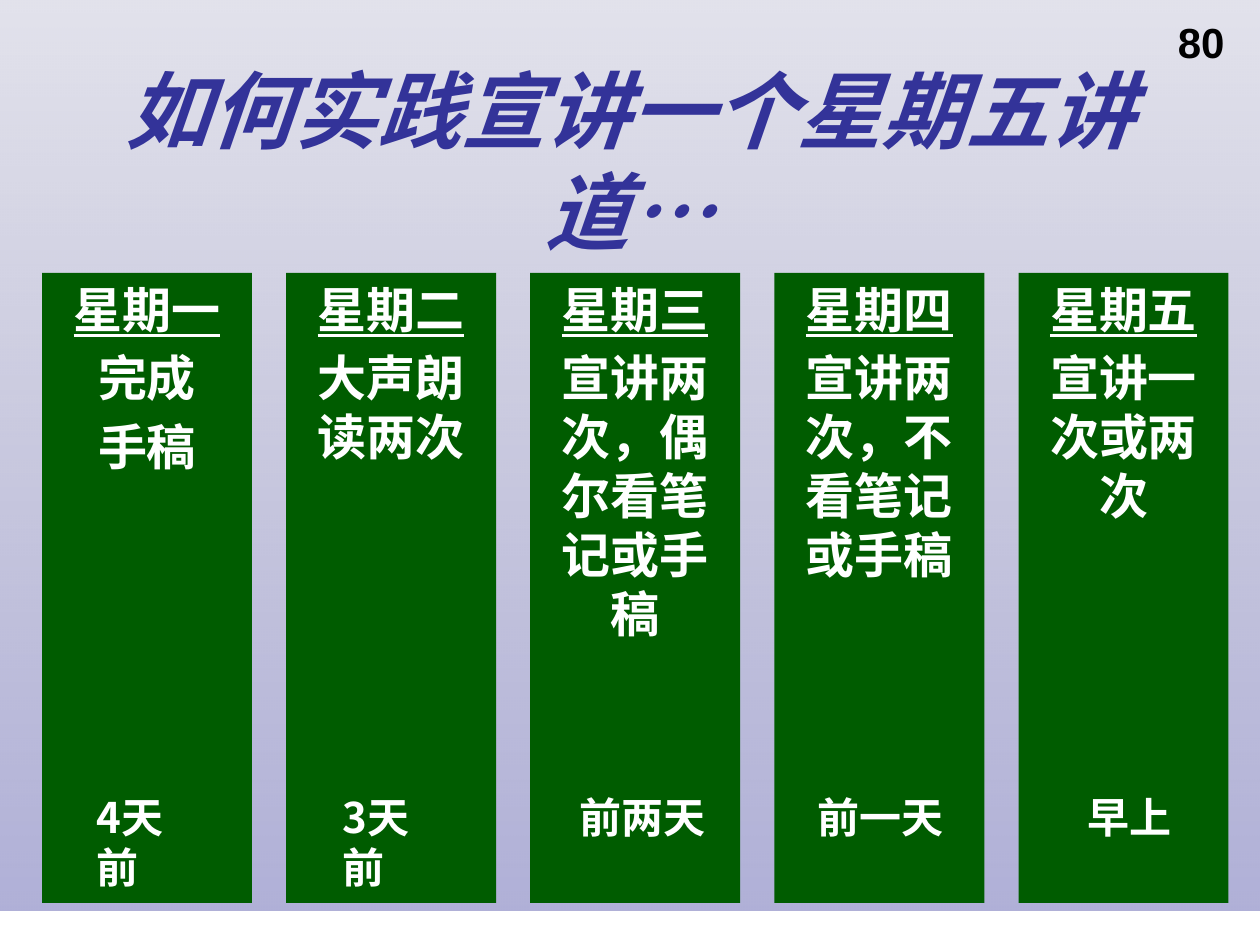
"""Build the Friday sermon practice slide."""
from dataclasses import dataclass

from lxml.etree import SubElement
from pptx import Presentation
from pptx.dml.color import RGBColor
from pptx.enum.shapes import MSO_SHAPE as Preset
from pptx.enum.text import MSO_ANCHOR as Anchor, MSO_AUTO_SIZE as AutoSize, PP_ALIGN as Align
from pptx.oxml.ns import qn
from pptx.util import Pt

CJK = "Noto Sans CJK TC"
WHITE, GREEN, BLUE, NAVY = "FFFFFF", "005C00", "333399", "24246D"
CARD_LEFT, CARD_TOP, CARD_STEP = 24, 156, 139.5
CARD_WIDTH, CARD_HEIGHT = 120, 360
LABEL_TOP, LABEL_HEIGHT = 448.5, 65.5


@dataclass
class Day:
    name: str
    tasks: list[str]
    label: str
    label_left: float
    label_width: float


DAYS = [
    Day("星期一", ["完成", "手稿"], "4天前", 48.3, 75),
    Day("星期二", ["大声朗读两次"], "3天前", 188.5, 75),
    Day("星期三", ["宣讲两次，偶尔看笔记或手稿"], "前两天", 324, 87.2),
    Day("星期四", ["宣讲两次，不看笔记或手稿"], "前一天", 460.3, 87.2),
    Day("星期五", ["宣讲一次或两次"], "早上", 614.2, 63.5),
]


def color(value: str) -> RGBColor:
    """Turn a hex string into a colour."""
    return RGBColor.from_string(value)


def apply(target, values: dict) -> None:
    """Set every attribute in the dict on the target."""
    for name, value in values.items():
        setattr(target, name, value)


def write(para, text: str, size: float, ink: str, font: str = CJK, **style) -> None:
    """Add one bold span to a paragraph."""
    span = para.add_run()
    span.text = text
    apply(span.font, {"size": Pt(size), "name": font, "bold": True, **style})
    span.font.color.rgb = color(ink)
    SubElement(span.font._element, qn("a:ea"), typeface=font)


def add_rectangle(page, left: float, top: float, width: float, height: float):
    """Add a rectangle without outline or shadow."""
    box = page.shapes.add_shape(Preset.RECTANGLE, Pt(left), Pt(top), Pt(width), Pt(height))
    box.shadow.inherit = False
    box.line.fill.background()
    return box


def add_label(page, text: str, left: float, top: float, width: float, height: float,
              ink: str, font: str = CJK, wrap: bool = True) -> None:
    """Add a left-aligned text box."""
    box = page.shapes.add_textbox(Pt(left), Pt(top), Pt(width), Pt(height))
    box.text_frame.word_wrap = wrap
    write(box.text_frame.paragraphs[0], text, 24, ink, font)


def add_backdrop(page) -> None:
    """Place the translucent gradient behind the title."""
    box = add_rectangle(page, 0, -19.5, 720, 540)
    box.fill.gradient()
    box.fill.gradient_angle = 270
    stops = zip(box.fill.gradient_stops, (0, 1), (NAVY, BLUE), (12, 39))
    for stop, position, tint, opacity in stops:
        stop.position = position
        stop.color.rgb = color(tint)
    for tint, opacity in zip(box.element.iter(qn("a:srgbClr")), (12, 39)):
        SubElement(tint, qn("a:alpha"), val=str(opacity * 1000))
    page.shapes.title.element.addprevious(box.element)


def add_title(page, text: str) -> None:
    """Format and fill the title placeholder."""
    title = page.shapes.title
    apply(title, {"left": Pt(30), "top": Pt(53.5), "width": Pt(660), "height": Pt(75)})
    apply(title.text_frame, {"auto_size": AutoSize.NONE, "word_wrap": True,
                             "vertical_anchor": Anchor.MIDDLE})
    para = title.text_frame.paragraphs[0]
    para.alignment = Align.CENTER
    write(para, text, 48, BLUE, italic=True)


def add_day(page, index: int, day: Day) -> None:
    """Draw one day's card and its label."""
    box = add_rectangle(page, CARD_LEFT + index * CARD_STEP, CARD_TOP, CARD_WIDTH, CARD_HEIGHT)
    box.fill.solid()
    box.fill.fore_color.rgb = color(GREEN)
    frame = box.text_frame
    apply(frame, {"word_wrap": True, "vertical_anchor": Anchor.TOP})
    for row, text in enumerate([day.name, *day.tasks]):
        para = frame.add_paragraph() if row else frame.paragraphs[0]
        apply(para, {"alignment": Align.CENTER, "space_before": Pt(5.6)})
        write(para, text, 28, WHITE, underline=row == 0)
    add_label(page, day.label, day.label_left, LABEL_TOP, day.label_width, LABEL_HEIGHT, WHITE)


def main() -> None:
    """Create and save the deck."""
    deck = Presentation()
    apply(deck, {"slide_width": Pt(720), "slide_height": Pt(540)})
    page = deck.slides.add_slide(deck.slide_layouts[5])
    add_backdrop(page)
    add_title(page, "如何实践宣讲一个星期五讲道…")
    add_label(page, "80", 666, 6, 42, 36.5, "000000", "Arial", wrap=False)
    for index, day in enumerate(DAYS):
        add_day(page, index, day)
    deck.save("out.pptx")


if __name__ == "__main__":
    main()
